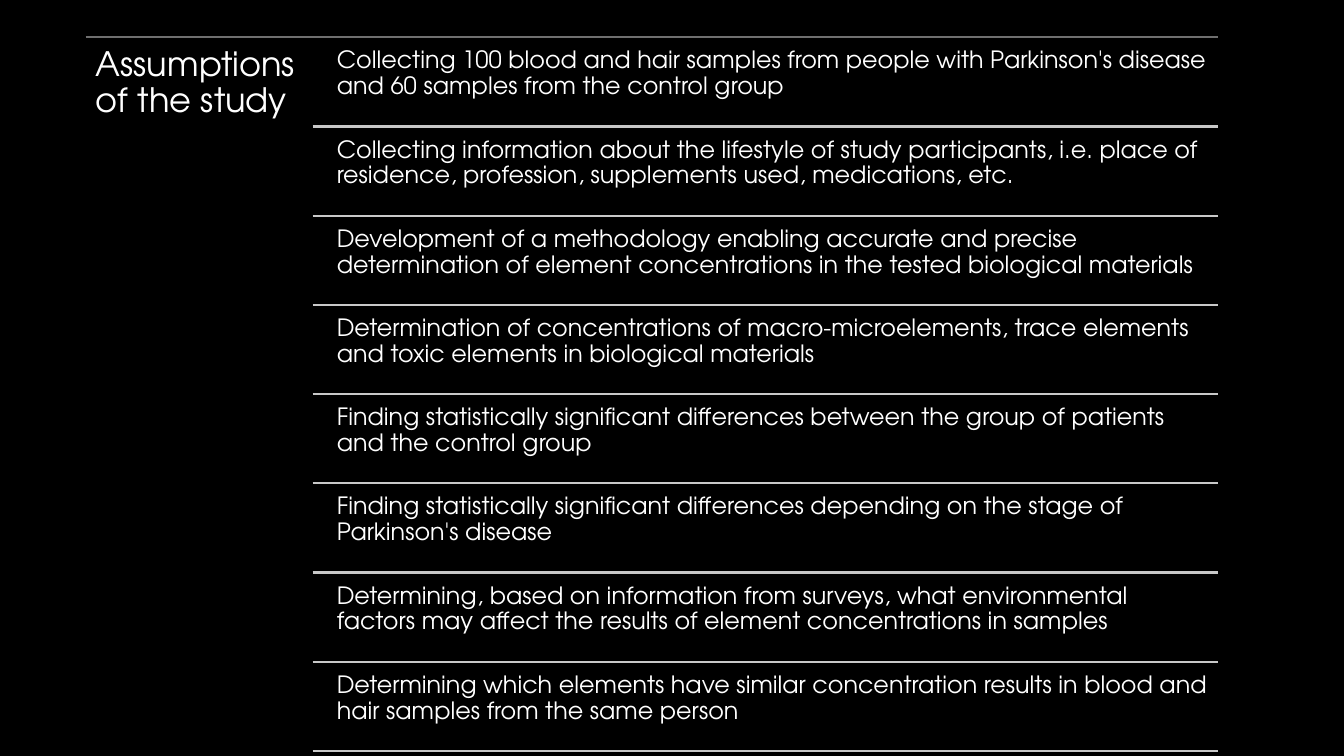
from lxml.etree import SubElement
from pptx import Presentation
from pptx.dml.color import RGBColor
from pptx.enum.shapes import MSO_CONNECTOR
from pptx.enum.text import MSO_ANCHOR, MSO_AUTO_SIZE, PP_ALIGN
from pptx.oxml.ns import qn
from pptx.util import Inches, Pt

COLORS = {"background": "000000", "text": "FFFFFF", "top_rule": "6F6F6F", "row_rule": "C8C8C8"}
FONT = "TeX Gyre Adventor"
TITLE_LEFT, RULE_LEFT, TEXT_LEFT, RIGHT = 0.85, 3.1, 3.27, 12.08
TOP, ROW_PITCH, ROW_HEIGHT, ROW_GAP = 0.37, 0.885, 0.84, 0.04
ASSUMPTIONS = [
    "Collecting 100 blood and hair samples from people with Parkinson's disease and 60 samples from the control group",
    "Collecting information about the lifestyle of study participants, i.e. place of residence, profession, supplements used, medications, etc.",
    "Development of a methodology enabling accurate and precise determination of element concentrations in the tested biological materials",
    "Determination of concentrations of macro-microelements, trace elements and toxic elements in biological materials",
    "Finding statistically significant differences between the group of patients and the control group",
    "Finding statistically significant differences depending on the stage of Parkinson's disease",
    "Determining, based on information from surveys, what environmental factors may affect the results of element concentrations in samples",
    "Determining which elements have similar concentration results in blood and hair samples from the same person",
]


def color(name):
    return RGBColor.from_string(COLORS[name])


def write_text(box, text, size, inset):
    frame = box.text_frame
    frame.text = text
    frame.word_wrap = True
    frame.auto_size = MSO_AUTO_SIZE.NONE
    frame.vertical_anchor = MSO_ANCHOR.TOP
    frame.margin_left = frame.margin_right = Inches(inset)
    frame.margin_top = frame.margin_bottom = Inches(inset)
    para = frame.paragraphs[0]
    para.alignment = PP_ALIGN.LEFT
    para.line_spacing = 0.9
    span = para.runs[0]
    span.font.name = FONT
    span.font.size = Pt(size)
    span.font.color.rgb = color("text")


def add_title(page, text):
    title = page.shapes.title
    title.left, title.top = Inches(TITLE_LEFT), Inches(TOP)
    title.width, title.height = Inches(2.25), Inches(7.13)
    write_text(title, text, 24, 0.1)


def add_rule(page, left, top, color_name):
    rule = page.shapes.add_connector(
        MSO_CONNECTOR.STRAIGHT, Inches(left), Inches(top), Inches(RIGHT), Inches(top))
    rule.line.color.rgb = color(color_name)
    rule.line.width = Pt(1.5)
    SubElement(rule._element.spPr, qn("a:effectLst"))


def add_assumption(page, text, top):
    box = page.shapes.add_textbox(
        Inches(TEXT_LEFT), Inches(top + ROW_GAP), Inches(RIGHT - TEXT_LEFT), Inches(ROW_HEIGHT))
    write_text(box, text, 17, 0.07)
    add_rule(page, RULE_LEFT, top + ROW_PITCH, "row_rule")


def main():
    deck = Presentation()
    deck.slide_width, deck.slide_height = Inches(13.33), Inches(7.5)
    page = deck.slides.add_slide(deck.slide_layouts[5])
    page.background.fill.solid()
    page.background.fill.fore_color.rgb = color("background")
    add_rule(page, TITLE_LEFT, TOP, "top_rule")
    add_title(page, "Assumptions of the study")
    for row, text in enumerate(ASSUMPTIONS):
        add_assumption(page, text, TOP + row * ROW_PITCH)
    deck.save("out.pptx")


if __name__ == "__main__":
    main()
